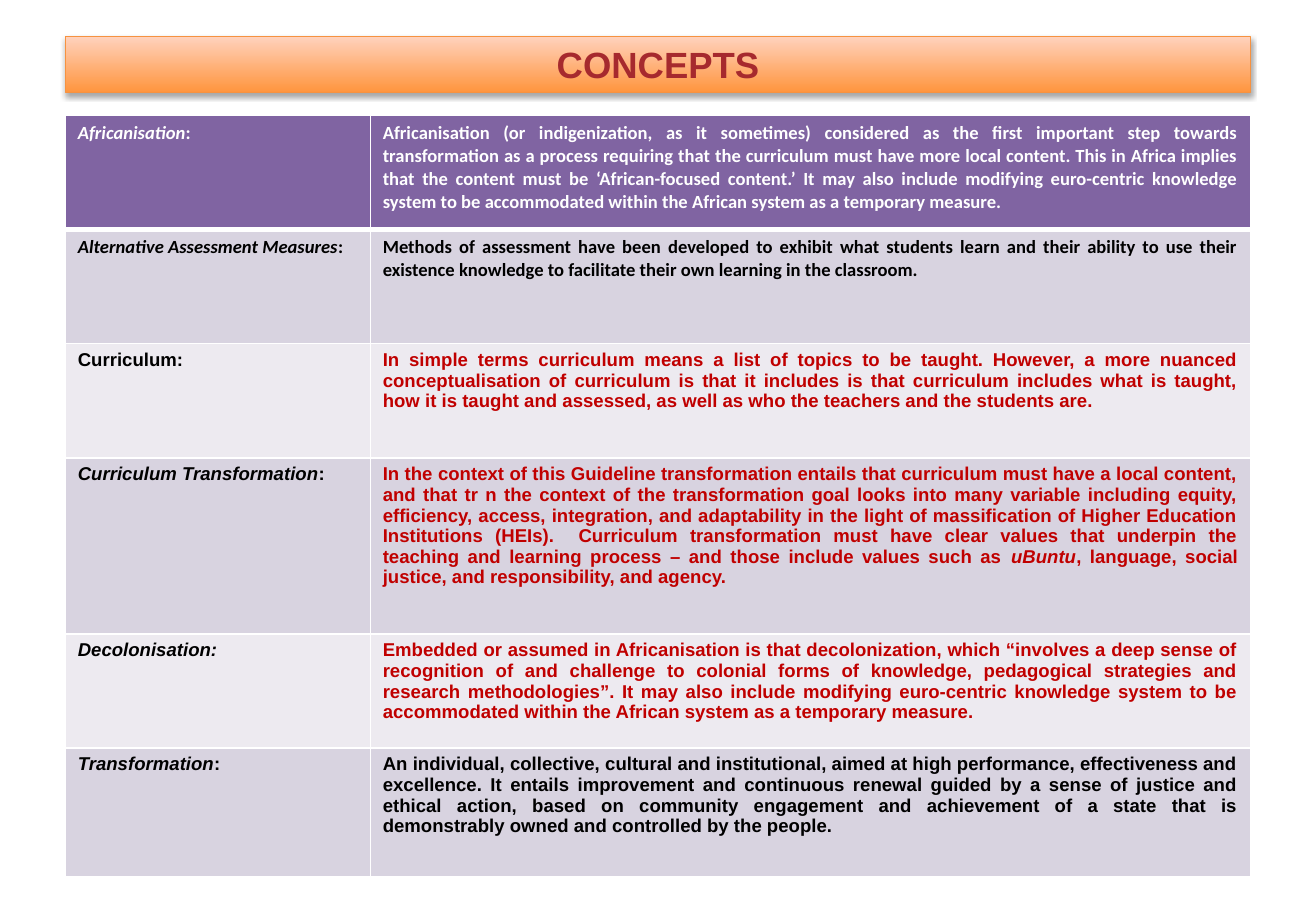
from lxml import etree
from pptx import Presentation
from pptx import util as u
from pptx.dml import color
from pptx.enum import text
from pptx.oxml import ns

PX = 9144
WHITE, BLACK, RED = "FFFFFF", "000000", "C00000"
PURPLE, LILAC, PALE = "8064A2", "D8D3E0", "EDEAF0"
COLUMNS = (251, 724)

CONCEPTS = [
    (94, "Calibri", WHITE, PURPLE, "*Africanisation*:",
     "Africanisation (or indigenization, as it sometimes) considered as the first important step "
     "towards transformation as a process requiring that the curriculum must have more local "
     "content. This in Africa implies that the content must be ‘African-focused content.’ It may "
     "also include modifying euro-centric knowledge system to be accommodated within the African "
     "system as a temporary measure."),
    (94, "Calibri", BLACK, LILAC, "*Alternative Assessment Measures*:",
     "Methods of assessment have been developed to exhibit what students learn and their ability "
     "to use their existence knowledge to facilitate their own learning in the classroom."),
    (94, "Arial", RED, PALE, "Curriculum:",
     "In simple terms curriculum means a list of topics to be taught. However, a more nuanced "
     "conceptualisation of curriculum is that it includes is that curriculum includes what is "
     "taught, how it is taught and assessed, as well as who the teachers and the students are."),
    (145, "Arial", RED, LILAC, "*Curriculum Transformation*:",
     "In the context of this Guideline transformation entails that curriculum must have a local "
     "content, and that tr n the context of the transformation goal looks into many variable "
     "including equity, efficiency, access, integration, and adaptability in the light of "
     "massification of Higher Education Institutions (HEIs).  Curriculum transformation must have "
     "clear values that underpin the teaching and learning process – and those include values "
     "such as *uBuntu*, language, social justice, and responsibility, and agency."),
    (94, "Arial", RED, PALE, "*Decolonisation:*",
     "Embedded or assumed in Africanisation is that decolonization, which “involves a deep sense "
     "of recognition of and challenge to colonial forms of knowledge, pedagogical strategies and "
     "research methodologies”. It may also include modifying euro-centric knowledge system to be "
     "accommodated within the African system as a temporary measure."),
    (106, "Arial", BLACK, LILAC, "*Transformation*:",
     "An individual, collective, cultural and institutional, aimed at high performance, "
     "effectiveness and excellence. It entails improvement and continuous renewal guided by a "
     "sense of justice and ethical action, based on community engagement and achievement of a "
     "state that is demonstrably owned and controlled by the people."),
]


def px(length):
    """Turn whole px into EMU."""
    return u.Emu(length * PX)


def paint(target, value):
    """Give a colour format the colour of a hex string."""
    target.rgb = color.RGBColor.from_string(value)


def write(frame, words, *, size, font, ink, align):
    """Write one bold paragraph, with the parts between asterisks in italics."""
    para = frame.paragraphs[0]
    para.alignment = align
    for index, part in enumerate(words.split("*")):
        if part:
            span = para.add_run()
            span.text = part
            span.font.size = u.Pt(size)
            span.font.name = font
            span.font.bold = True
            span.font.italic = index % 2 == 1
            paint(span.font.color, ink)


def add_shadow(shape):
    """Put a soft shadow just below a shape."""
    effects = etree.SubElement(shape.element.spPr, ns.qn("a:effectLst"))
    shadow = etree.SubElement(effects, ns.qn("a:outerShdw"), blurRad=str(u.Pt(3.1)),
                              dist=str(u.Pt(1.8)), dir="5400000", rotWithShape="0")
    shade = etree.SubElement(shadow, ns.qn("a:srgbClr"), val=BLACK)
    etree.SubElement(shade, ns.qn("a:alpha"), val="35000")


def add_border(cell, side, points):
    """Draw one white edge of a cell."""
    edge = etree.SubElement(cell._tc.get_or_add_tcPr(), ns.qn(f"a:ln{side}"),
                            w=str(u.Pt(points)))
    fill = etree.SubElement(edge, ns.qn("a:solidFill"))
    etree.SubElement(fill, ns.qn("a:srgbClr"), val=WHITE)


def build_title(page, left, top, width, height):
    """Place the title on its orange banner."""
    title = page.shapes.title
    title.left, title.top, title.width, title.height = map(px, (left, top, width, height))
    title.fill.gradient()
    title.fill.gradient_angle = 90
    for stop, value in zip(title.fill.gradient_stops, ("FF953E", "FFD2BD")):
        paint(stop.color, value)
    paint(title.line.color, "F69240")
    title.line.width = u.Pt(0.75)
    add_shadow(title)
    frame = title.text_frame
    frame.auto_size = text.MSO_AUTO_SIZE.NONE
    frame.vertical_anchor = text.MSO_ANCHOR.MIDDLE
    write(frame, "CONCEPTS", size=21.6, font="Arial", ink="A62A2E",
          align=text.PP_ALIGN.CENTER)


def build_table(page, left, top, width, height):
    """Place the table of terms and their definitions."""
    table = page.shapes.add_table(len(CONCEPTS), len(COLUMNS),
                                  *map(px, (left, top, width, height))).table
    table.first_row = table.horz_banding = False
    for column, size in zip(table.columns, COLUMNS):
        column.width = px(size)
    for index, (tall, font, ink, fill, term, meaning) in enumerate(CONCEPTS):
        table.rows[index].height = px(tall)
        term_ink = BLACK if ink == RED else ink
        for cell, words, shade in zip(table.rows[index].cells, (term, meaning),
                                      (term_ink, ink)):
            for side in "LRTB":
                under_head = (index, side) in ((0, "B"), (1, "T"))
                add_border(cell, side, 3 if under_head else 1)
            cell.fill.solid()
            paint(cell.fill.fore_color, fill)
            write(cell.text_frame, words, size=11, font=font, ink=shade,
                  align=text.PP_ALIGN.JUSTIFY)


def main():
    """Build the slide and save it."""
    deck = Presentation()
    deck.slide_width, deck.slide_height = px(1083), px(750)
    page = deck.slides.add_slide(deck.slide_layouts[5])
    build_title(page, 54, 30, 975, 46)
    build_table(page, 54, 95, sum(COLUMNS), sum(row[0] for row in CONCEPTS))
    deck.save("out.pptx")


if __name__ == "__main__":
    main()
